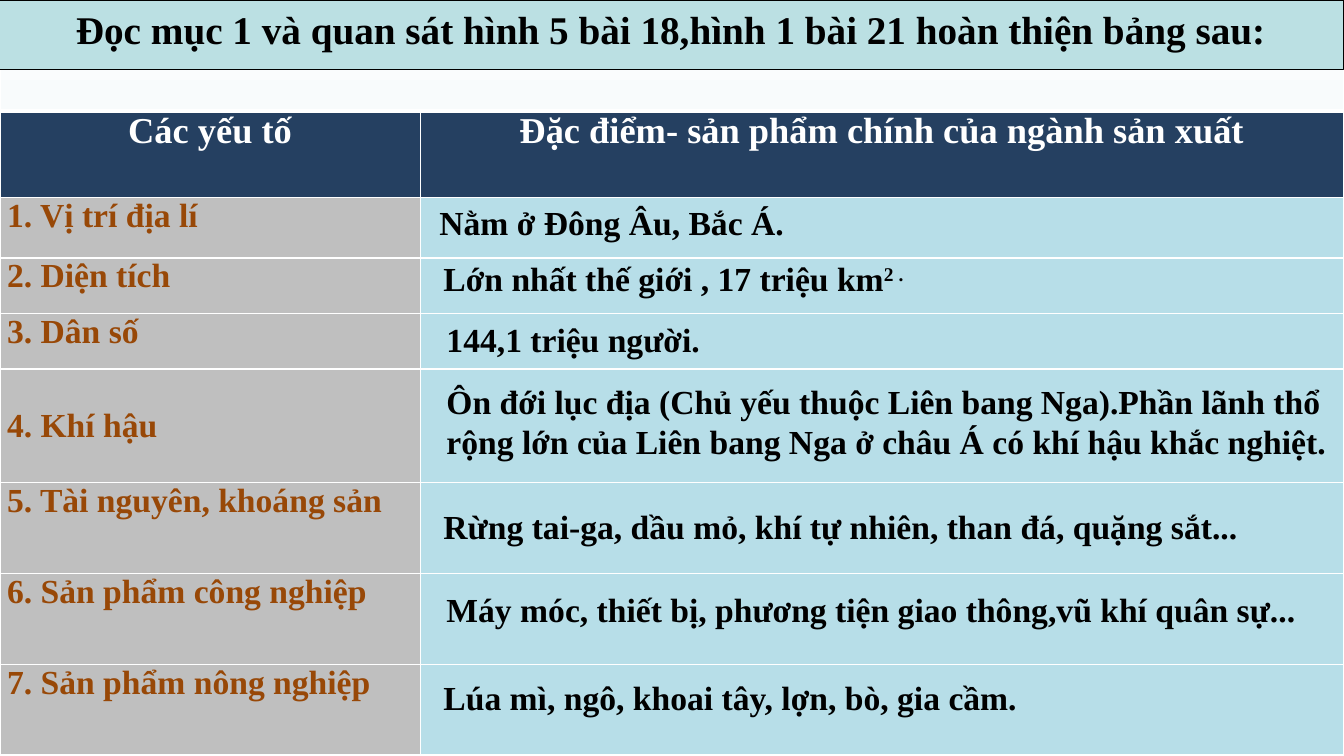
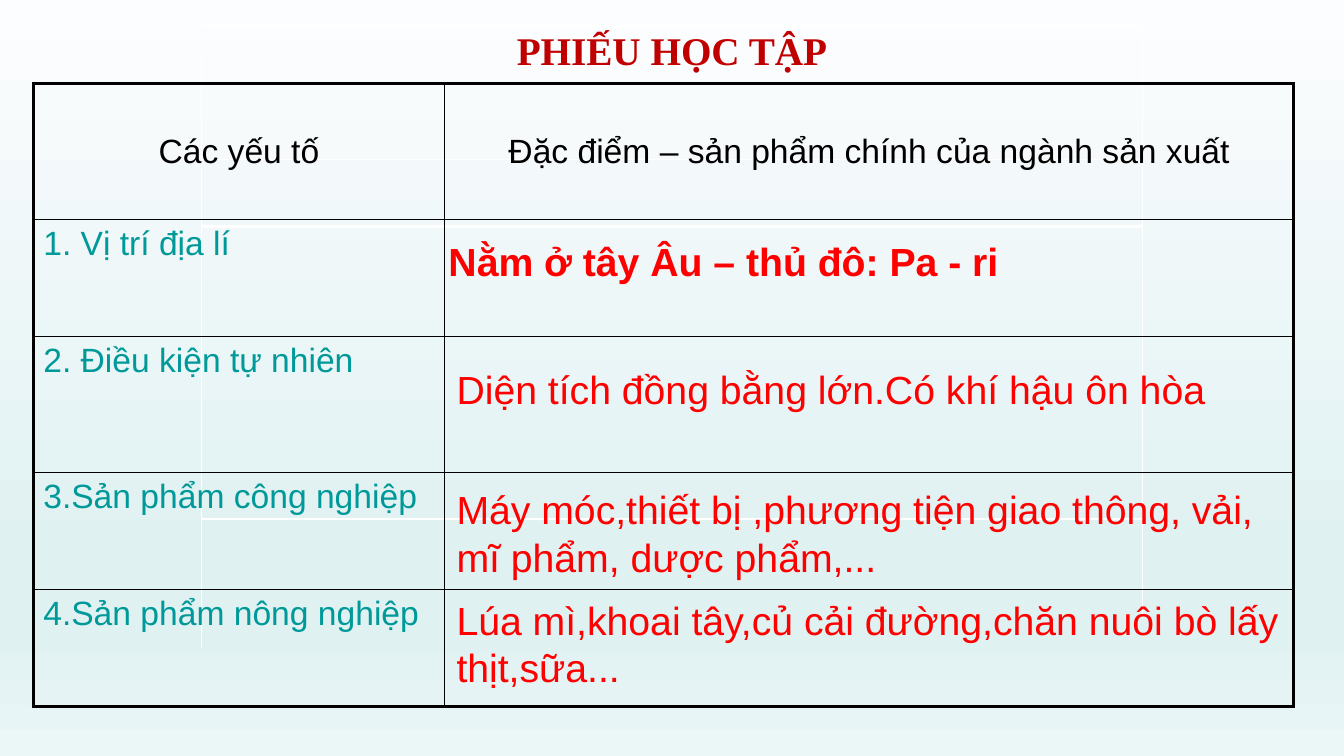
from pptx import Presentation
from pptx.dml.color import RGBColor
from pptx.enum.shapes import MSO_CONNECTOR, MSO_SHAPE
from pptx.enum.text import MSO_ANCHOR, PP_ALIGN
from pptx.oxml import parse_xml
from pptx.oxml.ns import nsdecls, qn
from pptx.util import Inches, Pt

HEX = {
    "white": "FFFFFF", "black": "000000", "navy": "254061", "gray": "BFBFBF",
    "sky": "B7DEE8", "band": "BBE0E3", "brown": "984807", "teal": "009999",
    "red": "FF0000", "wine": "C00000",
}
FADE = [(0, "FCFDFE"), (74, "E0F1F2"), (83, "E0F1F2"), (100, "EBF6F7")]


def style(name, size, color, bold=False):
    return {"name": name, "size": Pt(size), "bold": bold, "color": color}


SERIF, SANS = "Times New Roman", "Arial"
TITLE = style(SERIF, 28, "black", True)
HEAD = style(SERIF, 26, "white", True)
LABEL = style(SERIF, 24, "brown", True)
REPLY = style(SERIF, 24, "black", True)
SHEET = TITLE | {"color": "wine"}
PLAIN = style(SANS, 24, "black")
TOPIC = PLAIN | {"color": "teal"}
NOTE = style(SANS, 28, "red")


def rgb(name):
    return RGBColor.from_string(HEX[name])


def write(para, text, form):
    run = para.add_run()
    run.text = text
    for key, value in form.items():
        if key == "color":
            run.font.color.rgb = rgb(value)
        else:
            setattr(run.font, key, value)
    return run


def inset(area, side, top):
    area.margin_left = area.margin_right = Inches(side)
    area.margin_top = area.margin_bottom = Inches(top)


def label(slide, box, text, form, align=PP_ALIGN.LEFT, pad=(0.1, 0.05)):
    frame = slide.shapes.add_textbox(*map(Inches, box)).text_frame
    frame.word_wrap = True
    inset(frame, *pad)
    para = frame.paragraphs[0]
    para.alignment = align
    write(para, text, form)
    return para


def rule(slide, ends, width):
    line = slide.shapes.add_connector(MSO_CONNECTOR.STRAIGHT, *map(Inches, ends))
    line.line.color.rgb = rgb("white")
    line.line.width = Pt(width)
    line._element.spPr.append(parse_xml(f"<a:effectLst {nsdecls('a')}/>"))


def edge(cell, color, widths):
    for side, width in zip("LRTB", widths):
        cell._tc.get_or_add_tcPr().append(parse_xml(
            f'<a:ln{side} {nsdecls("a")} w="{Pt(width)}"><a:solidFill>'
            f'<a:srgbClr val="{HEX[color]}"/></a:solidFill></a:ln{side}>'))


def grid(slide, left, top, cols, rows, color, vert, horiz, pad):
    """Table whose grid lines have the widths in vert and horiz."""
    table = slide.shapes.add_table(
        len(rows), len(cols), Inches(left), Inches(top),
        Inches(sum(cols)), Inches(sum(rows))).table
    table.first_row = table.horz_banding = False
    for col, width in zip(table.columns, cols):
        col.width = Inches(width)
    for r, height in enumerate(rows):
        table.rows[r].height = Inches(height)
        for c in range(len(cols)):
            cell = table.cell(r, c)
            inset(cell, *pad)
            edge(cell, color, (*vert[c:c + 2], *horiz[r:r + 2]))
            cell.fill.background()
    return table


def put(cell, text, form, align=PP_ALIGN.LEFT, anchor=MSO_ANCHOR.TOP):
    cell.vertical_anchor = anchor
    para = cell.text_frame.paragraphs[0]
    para.alignment = align
    write(para, text, form)


def paint(cell, color):
    cell.fill.solid()
    cell.fill.fore_color.rgb = rgb(color)


def backdrop(master):
    fill = master.background.fill
    fill.gradient()
    fill.gradient_angle = 270
    stops = master.element.find(".//" + qn("a:gsLst"))
    for stop in list(stops):
        stops.remove(stop)
    for pos, color in FADE:
        stops.append(parse_xml(
            f'<a:gs {nsdecls("a")} pos="{pos * 1000}"><a:srgbClr val="{color}"/></a:gs>'))


def banner(slide, box, text):
    band = slide.shapes.add_shape(MSO_SHAPE.RECTANGLE, *map(Inches, box))
    band.shadow.inherit = False
    band.fill.solid()
    band.fill.fore_color.rgb = rgb("band")
    band.line.color.rgb = rgb("black")
    band.line.width = Pt(0.75)
    frame = band.text_frame
    frame.word_wrap = True
    frame.vertical_anchor = MSO_ANCHOR.TOP
    frame.paragraphs[0].alignment = PP_ALIGN.CENTER
    write(frame.paragraphs[0], text, TITLE)


def survey(slide, left, top):
    """Colored table, with answers laid over its right column."""
    rows = [0.43, 0.86, 0.6, 0.55, 0.55, 1.13, 0.9, 0.9, 0.9]
    table = grid(slide, left, top, [4.17, 9.16], rows, "white",
                 [1] * 3, [1, 3] + [1] * 8, (0.07, 0))
    table.cell(0, 0).merge(table.cell(0, 1))

    # Header row
    heads = ["Các yếu tố", "Đặc điểm- sản phẩm chính của ngành sản xuất"]
    for c, text in enumerate(heads):
        paint(table.cell(1, c), "navy")
        put(table.cell(1, c), text, HEAD, PP_ALIGN.CENTER)

    # Topic, answer, answer offset from the table's corner
    items = [
        ("1. Vị trí địa lí", "Nằm ở Đông Âu, Bắc Á.", 4.26, 1.28),
        ("2. Diện tích", "Lớn nhất thế giới , 17 triệu km", 4.3, 1.84),
        ("3. Dân số", "144,1 triệu người.", 4.33, 2.44),
        ("4. Khí hậu", "Ôn đới lục địa (Chủ yếu thuộc Liên bang Nga).Phần lãnh thổ "
         "rộng lớn của Liên bang Nga ở châu Á có khí hậu khắc nghiệt.", 4.33, 3.06),
        ("5. Tài nguyên, khoáng sản",
         "Rừng tai-ga, dầu mỏ, khí tự nhiên, than đá, quặng sắt...", 4.3, 4.3),
        ("6. Sản phẩm công nghiệp",
         "Máy móc, thiết bị, phương tiện giao thông,vũ khí quân sự...", 4.33, 5.12),
        ("7. Sản phẩm nông nghiệp", "Lúa mì, ngô, khoai tây, lợn, bò, gia cầm.", 4.3, 6),
    ]
    for r, (topic, reply, dx, dy) in enumerate(items, 2):
        paint(table.cell(r, 0), "gray")
        paint(table.cell(r, 1), "sky")
        anchor = MSO_ANCHOR.MIDDLE if "Khí hậu" in topic else MSO_ANCHOR.TOP
        put(table.cell(r, 0), topic, LABEL, anchor=anchor)
        high = 0.91 if rows[r] > 1 else 0.5
        para = label(slide, (left + dx, top + dy, 9, high), reply, REPLY)
        if reply.endswith("km"):
            power = write(para, "2 .", REPLY)
            power._r.get_or_add_rPr().set("baseline", "30000")


def frame(slide, left, top, wide, high):
    """Thin white rules behind the worksheet."""
    right = left + wide
    for y, width in [(0, 1), (1.32, 1), (1.99, 2.25), (4.89, 1)]:
        rule(slide, (left, top + y, right, top + y), width)
    for x, y in [(left, top + 0.32), (right, top)]:
        rule(slide, (x, y, x, y + high), 1)


def sheet(slide, left, top):
    """Worksheet table, with answers laid over its right column."""
    table = grid(slide, left, top, [4.08, 8.42], [1.35, 1.16, 1.35, 1.16, 1.16],
                 "black", [2.25, 1, 2.25], [2.25, 1, 1, 1, 1, 2.25], (0.1, 0.05))
    heads = ["Các yếu tố", "Đặc điểm – sản phẩm chính của ngành sản xuất"]
    for c, text in enumerate(heads):
        put(table.cell(0, c), text, PLAIN, PP_ALIGN.CENTER, MSO_ANCHOR.MIDDLE)

    # Topic, answer, answer box relative to the table's corner
    items = [
        ("1. Vị trí địa lí", "Nằm ở tây Âu – thủ đô: Pa - ri", 4.02, 1.48, 0.57),
        ("2. Điều kiện tự nhiên", "Diện tích đồng bằng lớn.Có khí hậu ôn hòa",
         4.1, 2.75, 0.57),
        ("3.Sản phẩm công nghiệp", "Máy móc,thiết bị ,phương tiện giao thông, vải, "
         "mĩ phẩm, dược phẩm,...", 4.1, 3.94, 1.04),
        ("4.Sản phẩm nông nghiệp", "Lúa mì,khoai tây,củ cải đường,chăn nuôi bò lấy "
         "thịt,sữa...", 4.1, 5.04, 1.04),
    ]
    for r, (topic, reply, dx, dy, high) in enumerate(items, 1):
        put(table.cell(r, 0), topic, TOPIC)
        label(slide, (left + dx, top + dy, 8.4, high), reply, NOTE | {"bold": r == 1})


def main():
    deck = Presentation()
    deck.slide_width, deck.slide_height = Inches(13.33), Inches(7.5)
    backdrop(deck.slide_master)
    blank = deck.slide_layouts[6]

    # Completed table
    slide = deck.slides.add_slide(blank)
    survey(slide, 0, 0.67)
    banner(slide, (-0.03, 0, 13.36, 0.69),
           "Đọc mục 1 và quan sát hình 5 bài 18,hình 1 bài 21 hoàn thiện bảng sau:")

    # Worksheet
    slide = deck.slides.add_slide(blank)
    label(slide, (2, 0.26, 9.33, 0.47), "PHIẾU HỌC TẬP", SHEET,
          PP_ALIGN.CENTER, (0.07, 0))
    frame(slide, 2, 0.26, 9.33, 5.85)
    sheet(slide, 0.33, 0.83)

    deck.save("out.pptx")


if __name__ == "__main__":
    main()
